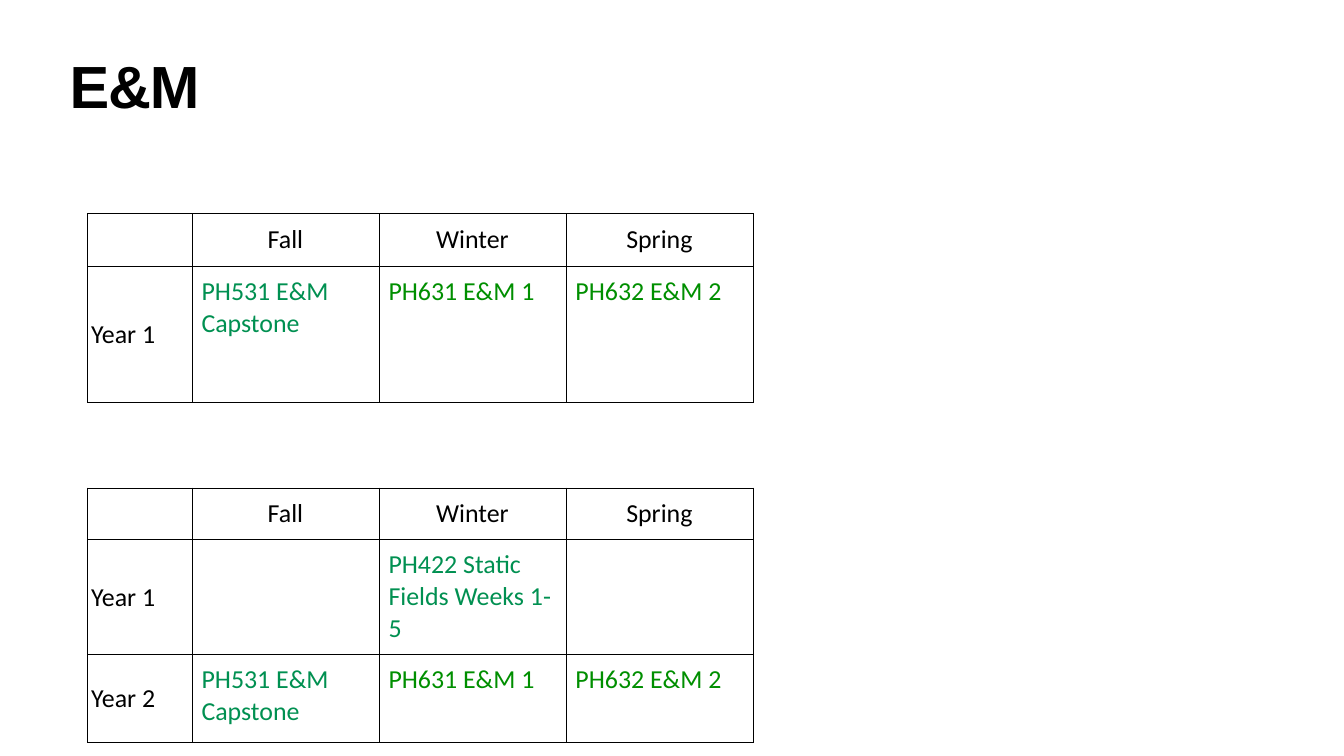
from lxml import etree
from pptx import Presentation
from pptx.dml.color import RGBColor
from pptx.enum.text import MSO_ANCHOR as Anchor, MSO_AUTO_SIZE as Fit, PP_ALIGN as Align
from pptx.oxml.ns import qn
from pptx.util import Inches, Pt

BLACK = RGBColor(0x00, 0x00, 0x00)
TEAL = RGBColor(0x00, 0x90, 0x51)
GREEN = RGBColor(0x00, 0x8F, 0x00)

TERMS = ["", "Fall", "Winter", "Spring"]
CORE = ["PH531 E&M Capstone", "PH631 E&M 1", "PH632 E&M 2"]
HUES = {"PH531": TEAL, "PH422": TEAL, "PH631": GREEN, "PH632": GREEN}
WIDTHS = [2.07, 3.71, 3.71, 3.71]


def write(frame, text, size=37, font="Calibri", color=BLACK, bold=False,
          align=Align.LEFT, leading=None, track=None):
    para = frame.paragraphs[0]
    para.alignment = align
    if leading:
        para.line_spacing = leading
    run = para.add_run()
    run.text = text
    run.font.size = Pt(size)
    run.font.name = font
    run.font.bold = bold
    run.font.color.rgb = color
    if track:
        run.font._element.set("spc", str(round(track * 100)))


def inset(item, across, down):
    item.margin_left = item.margin_right = Inches(across)
    item.margin_top = item.margin_bottom = Inches(down)


def frame_cell(cell):
    """Give the cell thin black borders and no fill."""
    props = cell._tc.get_or_add_tcPr()
    for side in ("lnL", "lnR", "lnT", "lnB"):
        line = etree.SubElement(props, qn(f"a:{side}"), w=str(Pt(1)))
        fill = etree.SubElement(line, qn("a:solidFill"))
        etree.SubElement(fill, qn("a:srgbClr"), val=str(BLACK))
    cell.fill.background()


def add_title(slide, text, left, top, width, height):
    title = slide.shapes.title
    title.left, title.top = Inches(left), Inches(top)
    title.width, title.height = Inches(width), Inches(height)
    frame = title.text_frame
    frame.auto_size = Fit.NONE
    frame.word_wrap = True
    frame.vertical_anchor = Anchor.TOP
    inset(frame, 0.06, 0.06)
    write(frame, text, size=85, font="Arial", bold=True, leading=0.8, track=-1.7)


def add_plan(slide, years, heights, left, top):
    """Add a course table with one row for each year below the terms."""
    rows = [TERMS] + years
    table = slide.shapes.add_table(
        len(rows), len(WIDTHS), Inches(left), Inches(top),
        Inches(sum(WIDTHS)), Inches(sum(heights))).table
    table.first_row = table.horz_banding = False
    for col, width in zip(table.columns, WIDTHS):
        col.width = Inches(width)
    for r, (row, height) in enumerate(zip(rows, heights)):
        table.rows[r].height = Inches(height)
        for c, text in enumerate(row):
            cell = table.cell(r, c)
            frame_cell(cell)
            label = r == 0 or c == 0
            if label:
                inset(cell, 0.07, 0)
                cell.vertical_anchor = Anchor.MIDDLE
            else:
                inset(cell, 0.19, 0.19)
            if text:
                write(cell.text_frame, text, color=HUES.get(text[:5], BLACK),
                      align=Align.CENTER if r == 0 else Align.LEFT)


def main():
    deck = Presentation()
    deck.slide_width, deck.slide_height = Inches(26.67), Inches(15)
    slide = deck.slides.add_slide(deck.slide_layouts[5])
    add_title(slide, "E&M", 1.32, 1.18, 24.03, 1.57)
    add_plan(slide, [["Year 1"] + CORE], [1.05, 2.7], 1.74, 4.24)
    add_plan(slide, [["Year 1", "", "PH422 Static Fields Weeks 1-5", ""],
                     ["Year 2"] + CORE], [1.03, 2.28, 1.74], 1.74, 9.68)
    deck.save("out.pptx")


if __name__ == "__main__":
    main()
